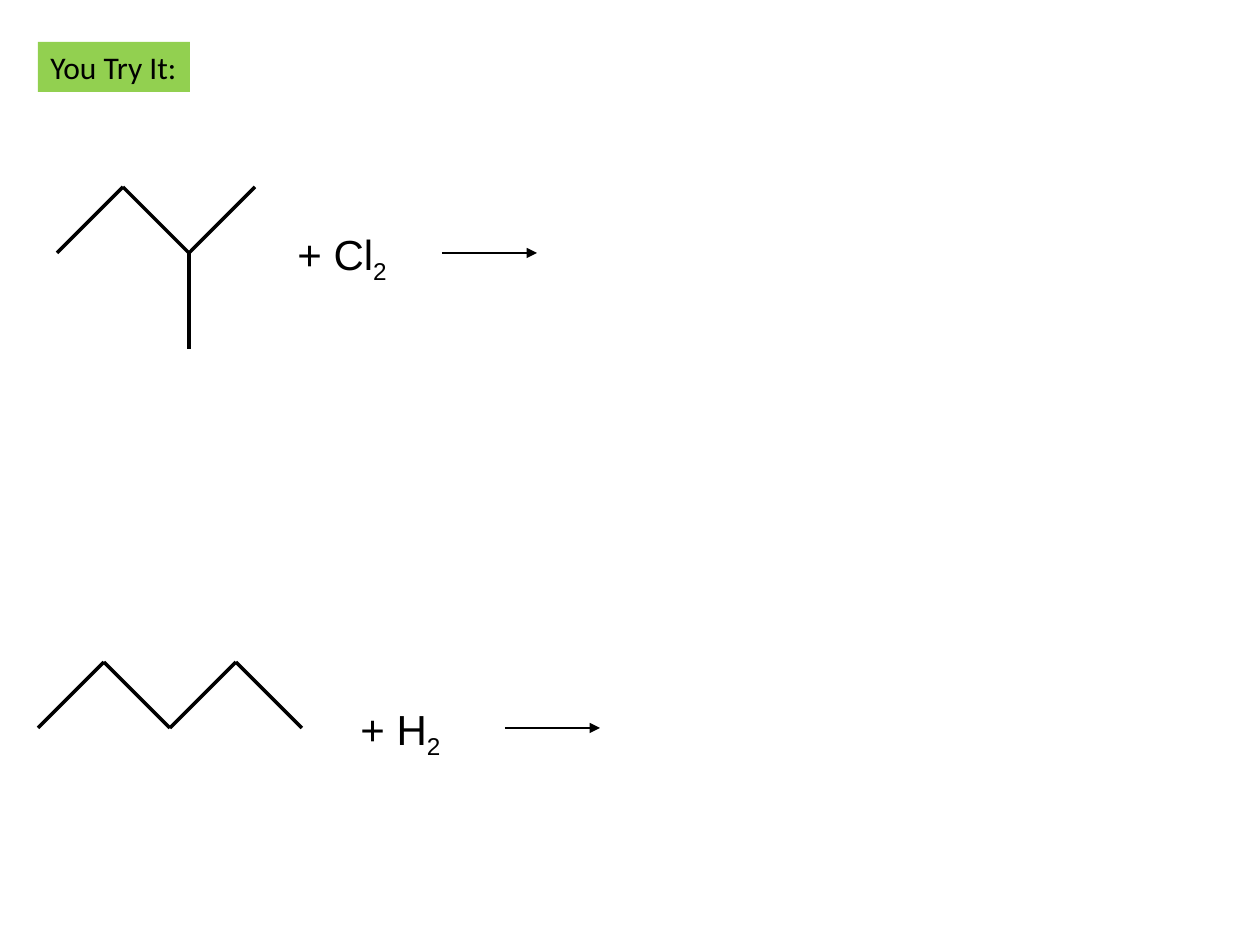
from itertools import pairwise

from pptx import Presentation
from pptx.dml.color import RGBColor
from pptx.enum.shapes import MSO_CONNECTOR as Connector, MSO_SHAPE as Shape
from pptx.enum.text import MSO_ANCHOR as Anchor, MSO_AUTO_SIZE as AutoSize, PP_ALIGN as Align
from pptx.oxml.ns import qn
from pptx.util import Emu, Pt
from lxml.etree import SubElement

BLACK = RGBColor(0x00, 0x00, 0x00)
GREEN = RGBColor(0x92, 0xD0, 0x50)
PX = 914400 / 126
BOND = 66


def px(length):
    return Emu(round(length * PX))


class Sketch:
    heading_font, formula_font = "Calibri", "Arial"

    def __init__(self, slide):
        self.shapes = slide.shapes

    def label(self, shape, text, font, size):
        frame = shape.text_frame
        frame.word_wrap = False
        frame.auto_size = AutoSize.SHAPE_TO_FIT_TEXT
        frame.vertical_anchor = Anchor.TOP
        paragraph = frame.paragraphs[0]
        paragraph.alignment = Align.LEFT
        paragraph.font.name = font
        paragraph.font.size = Pt(size)
        paragraph.font.color.rgb = BLACK
        paragraph.add_run().text = text
        return paragraph

    def heading(self, text, left, top, width, height):
        banner = self.shapes.add_shape(Shape.RECTANGLE, px(left), px(top), px(width), px(height))
        banner.shadow.inherit = False
        banner.fill.solid()
        banner.fill.fore_color.rgb = GREEN
        banner.line.fill.background()
        self.label(banner, text, self.heading_font, 18)

    def line(self, start, end, weight=2):
        stroke = self.shapes.add_connector(Connector.STRAIGHT, *map(px, start + end))
        stroke.line.color.rgb = BLACK
        stroke.line.width = Pt(weight)
        SubElement(stroke._element.spPr, qn("a:effectLst"))
        return stroke

    def arrow(self, left, top, length=95):
        stroke = self.line((left, top), (left + length, top), weight=1)
        outline = stroke._element.spPr.find(qn("a:ln"))
        SubElement(outline, qn("a:tailEnd"), type="triangle")

    def chain(self, left, low, carbons):
        atoms = [(left + BOND * i, low - BOND * (i % 2)) for i in range(carbons)]
        for start, end in pairwise(atoms):
            self.line(start, end)
        return atoms

    def reagent(self, element, left, top, width):
        formula = self.shapes.add_textbox(px(left), px(top), px(width), px(63))
        paragraph = self.label(formula, f"+ {element}", self.formula_font, 24)
        count = paragraph.add_run()
        count.text = "2"
        count.font._element.set("baseline", "-25000")

    def reaction(self, left, low, carbons, element, reagent_left, reagent_width):
        atoms = self.chain(left, low, carbons)
        self.reagent(element, reagent_left, low - 31, reagent_width)
        self.arrow(reagent_left + 157, low)
        return atoms


def main():
    deck = Presentation()
    deck.slide_width, deck.slide_height = px(1260), px(945)
    sketch = Sketch(deck.slides.add_slide(deck.slide_layouts[6]))

    sketch.heading("You Try It:", 38, 42, 152, 50)
    methylbutane = sketch.reaction(57, 253, 4, "Cl", 285, 117)
    branch_x, branch_y = methylbutane[2]
    sketch.line((branch_x, branch_y), (branch_x, branch_y + 96))
    sketch.reaction(38, 728, 5, "H", 348, 108)

    deck.save("out.pptx")


if __name__ == "__main__":
    main()
